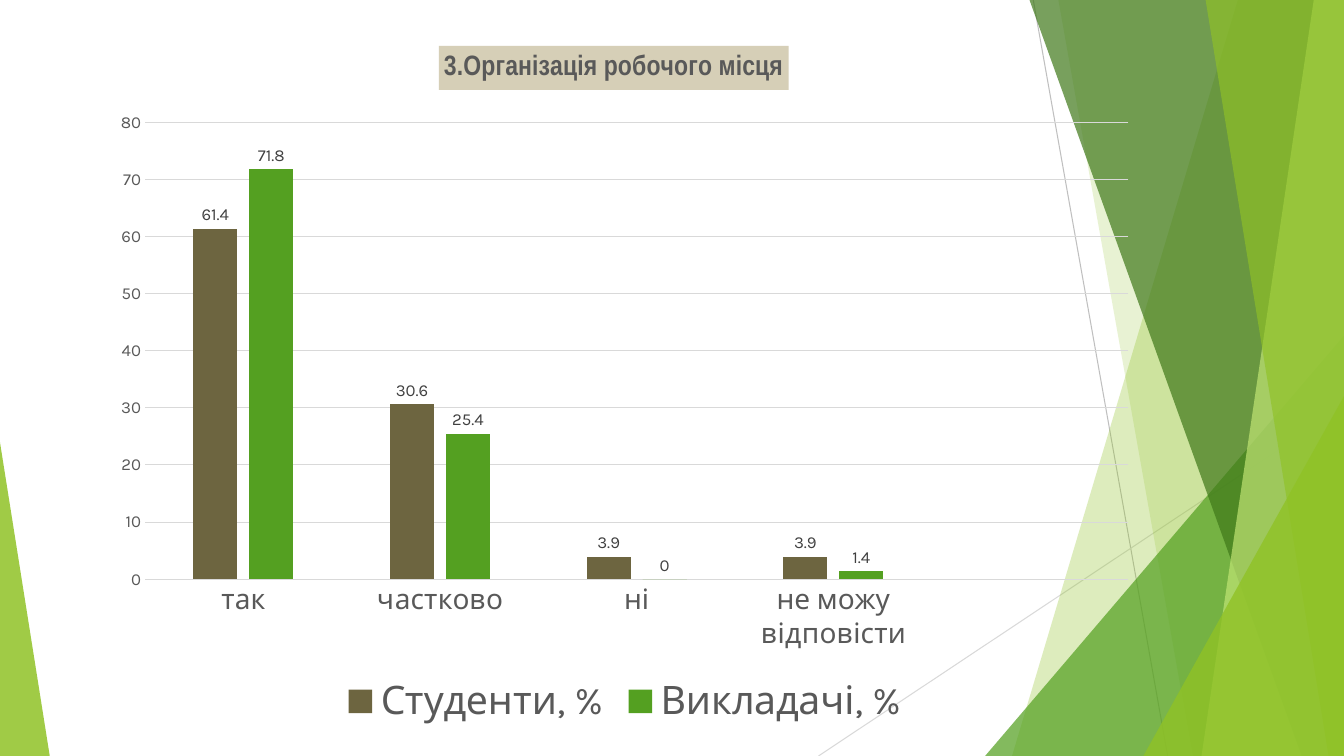
from dataclasses import dataclass
from lxml import etree
from pptx import Presentation, util as u
from pptx.chart.data import CategoryChartData
from pptx.dml.color import RGBColor
from pptx.enum import chart as ch, shapes
from pptx.oxml import parse_xml
from pptx.oxml.ns import nsdecls, qn

TITLE = "3.Організація робочого місця"
CATEGORIES = ["так", "частково", "ні", "не можу відповісти", ""]
SERIES = [
    ("Студенти, %", [61.4, 30.6, 3.9, 3.9, None], "6D6540"),
    ("Викладачі, %", [71.8, 25.4, 0, 1.4, None], "54A021"),
]

RAYS = [
    ((76.88, 0), (86.88, 100), "BFBFBF"),
    ((100, 53.75), (60.9, 100), "D9D9D9"),
]
FACETS = [
    ("band", 92.1, 75.3, "90C226", 30),
    ("band", 78.75, 88.75, "90C226", 20),
    ("wedge", 73.3, 100, 44.4, 1, "54A021", 72),
    ("band", 76.6, 96.85, "3F7819", 70),
    ("band", 97.75, 89.4, "C0E474", 70),
    ("band", 89.7, 98.85, "90C226", 65),
    ("wedge", 85.07, 100, 52.4, 1, "90C226", 80),
    ("wedge", 0, 3.7, 58.53, 0, "90C226", 85),
]
CHART_BOX = (7.43, 4.67, 78.1, 92.13)
PLOT_SHARE = {"x": 0.043, "y": 0.125, "w": 0.937, "h": 0.656}
TITLE_SHARE = {"x": 0.323, "y": 0.015}


@dataclass(frozen=True)
class Theme:
    font: str = "Karla"
    title_font: str = "Arial Narrow"
    text: str = "595959"
    label: str = "404040"
    grid: str = "D9D9D9"
    title_fill: str = "D6CFB7"
    title_size: int = 20
    category_size: int = 20
    value_size: int = 12
    legend_size: int = 28
    hairline: float = 0.75


theme = Theme()
prs = Presentation()
prs.slide_width, prs.slide_height = u.Inches(13.33), u.Inches(7.5)
s = prs.slides.add_slide(prs.slide_layouts[6])


def across(share):
    return round(prs.slide_width * share / 100)


def down(share):
    return round(prs.slide_height * share / 100)


def style_font(font, size, color, name=theme.font, bold=False):
    font.size, font.name, font.bold = u.Pt(size), name, bold
    font.color.rgb = RGBColor.from_string(color)


def style_line(line, color):
    line.color.rgb = RGBColor.from_string(color)
    line.width = u.Pt(theme.hairline)


def paint(sp, color, opacity):
    sp.shadow.inherit = False
    sp.fill.solid()
    sp.fill.fore_color.rgb = RGBColor.from_string(color)
    sp.line.fill.background()
    clr = sp.fill._xPr.find(qn("a:solidFill")).find(qn("a:srgbClr"))
    etree.SubElement(clr, qn("a:alpha")).set("val", str(opacity * 1000))


def add_band(top_x, bottom_x, color, opacity):
    builder = s.shapes.build_freeform(across(top_x), 0)
    corners = [(100, 0), (100, 100), (bottom_x, 100)]
    builder.add_line_segments([(across(x), down(y)) for x, y in corners])
    paint(builder.convert_to_shape(), color, opacity)


def add_wedge(left, right, top, apex, color, opacity):
    sp = s.shapes.add_shape(
        shapes.MSO_SHAPE.ISOSCELES_TRIANGLE,
        across(left), down(top), across(right - left), down(100 - top))
    sp.adjustments[0] = apex
    paint(sp, color, opacity)


def manual_layout(shares, inner=False):
    target = '<c:layoutTarget val="inner"/>' if inner else ""
    modes = "".join(f'<c:{k}Mode val="edge"/>' for k in "xy")
    sizes = "".join(f'<c:{k} val="{v}"/>' for k, v in shares.items())
    return parse_xml(
        f'<c:layout {nsdecls("c")}><c:manualLayout>{target}{modes}{sizes}'
        "</c:manualLayout></c:layout>")


def set_layout(parent, before, layout):
    for old in parent.findall(qn("c:layout")):
        parent.remove(old)
    parent.find(qn(before)).addprevious(layout)


def add_survey_chart():
    data = CategoryChartData()
    data.categories = CATEGORIES
    for name, values, _ in SERIES:
        data.add_series(name, values)
    x, y, w, h = CHART_BOX
    chart = s.shapes.add_chart(
        ch.XL_CHART_TYPE.COLUMN_CLUSTERED,
        across(x), down(y), across(w), down(h), data).chart
    style_font(chart.font, theme.value_size, theme.text)

    title = chart.chart_title
    title.text_frame.text = TITLE
    style_font(title.text_frame.paragraphs[0].runs[0].font,
               theme.title_size, theme.text, theme.title_font, True)
    title.format.fill.solid()
    title.format.fill.fore_color.rgb = RGBColor.from_string(theme.title_fill)
    title.include_in_layout = False
    set_layout(title._element, "c:overlay", manual_layout(TITLE_SHARE))

    plot = chart.plots[0]
    plot.gap_width, plot.overlap = 219, -27
    plot.vary_by_categories = False
    for series, (_, _, color) in zip(plot.series, SERIES):
        series.format.fill.solid()
        series.format.fill.fore_color.rgb = RGBColor.from_string(color)
        series.invert_if_negative = False
        labels = series.data_labels
        labels.show_value = True
        labels.position = ch.XL_LABEL_POSITION.OUTSIDE_END
        style_font(labels.font, theme.value_size, theme.label)
    plot_area = chart._chartSpace.chart.plotArea
    set_layout(plot_area, "c:barChart", manual_layout(PLOT_SHARE, True))

    cat, val = chart.category_axis, chart.value_axis
    for axis, size in ((cat, theme.category_size), (val, theme.value_size)):
        axis.major_tick_mark = axis.minor_tick_mark = ch.XL_TICK_MARK.NONE
        style_font(axis.tick_labels.font, size, theme.text)
    style_line(cat.format.line, theme.grid)
    val.format.line.fill.background()
    val.minimum_scale, val.maximum_scale, val.major_unit = 0, 80, 10
    style_line(val.major_gridlines.format.line, theme.grid)

    chart.has_legend = True
    chart.legend.position = ch.XL_LEGEND_POSITION.BOTTOM
    chart.legend.include_in_layout = False
    style_font(chart.legend.font, theme.legend_size, theme.text)


def main():
    for (x1, y1), (x2, y2), color in RAYS:
        ray = s.shapes.add_connector(
            shapes.MSO_CONNECTOR.STRAIGHT,
            across(x1), down(y1), across(x2), down(y2))
        style_line(ray.line, color)
        etree.SubElement(ray._element.spPr, qn("a:effectLst"))
    draw = {"band": add_band, "wedge": add_wedge}
    for kind, *facet in FACETS:
        draw[kind](*facet)
    add_survey_chart()
    prs.save("out.pptx")


if __name__ == "__main__":
    main()
